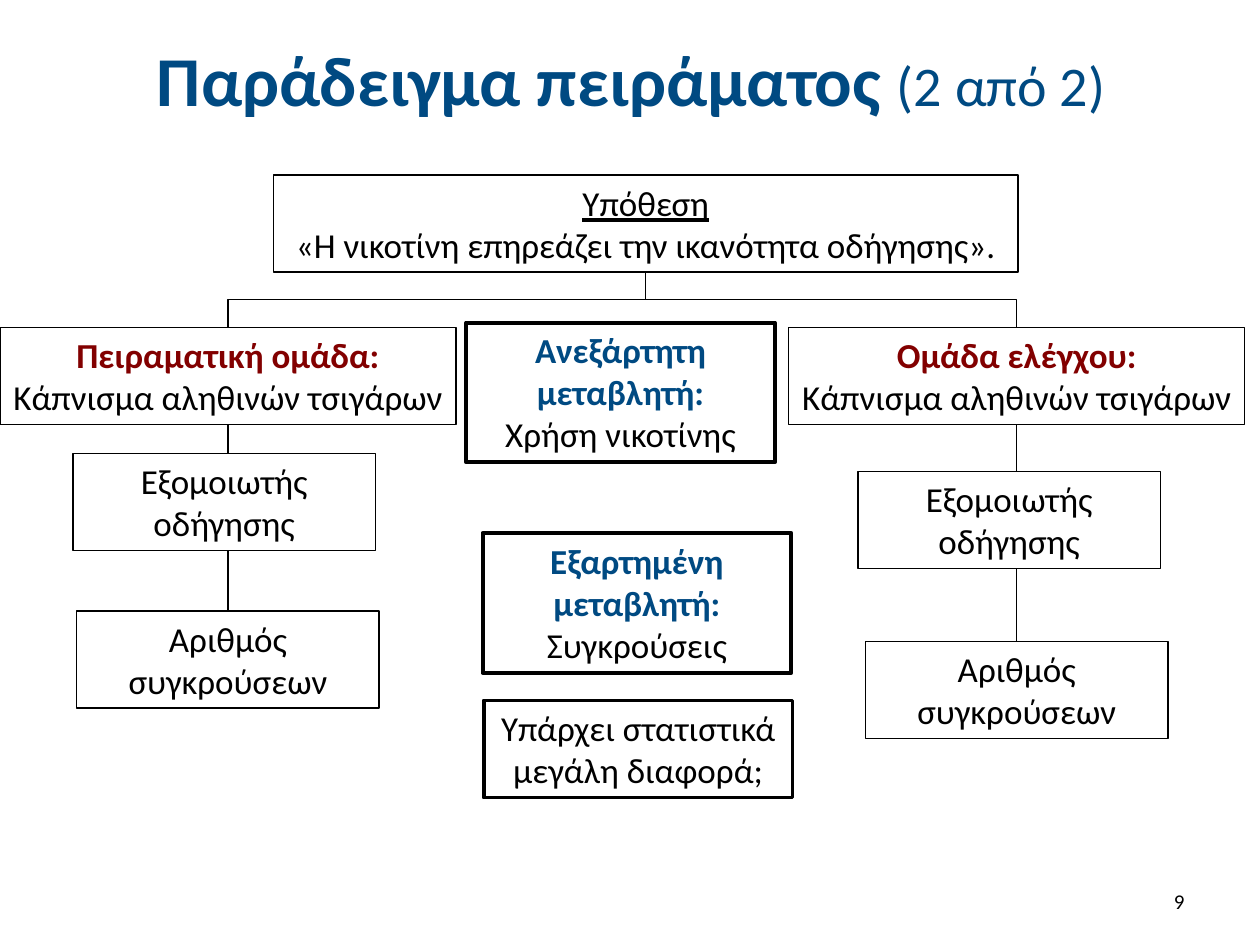
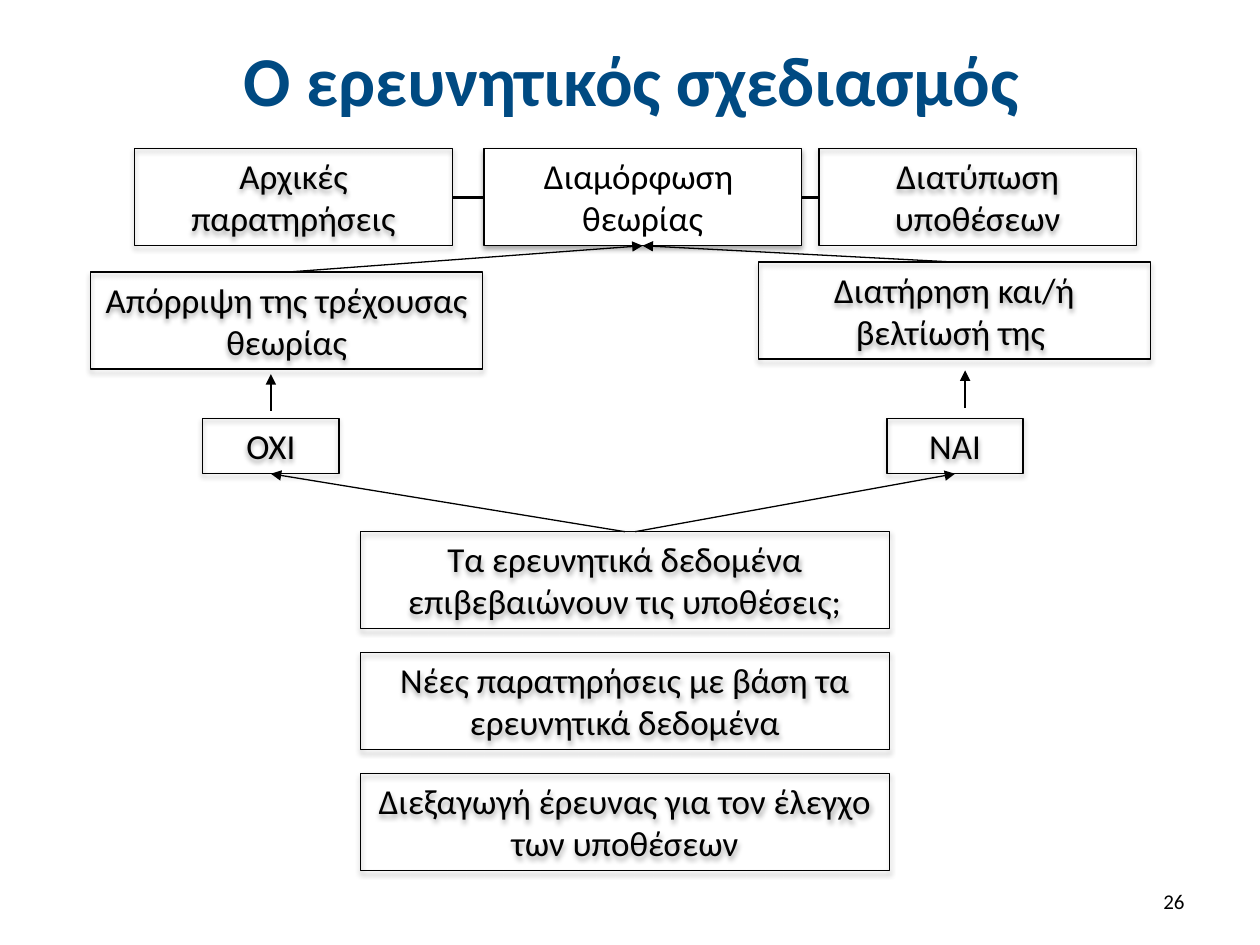
import dataclasses

import lxml.etree
import pptx
import pptx.dml.color
import pptx.enum.shapes
import pptx.enum.text
import pptx.oxml.ns
import pptx.util

SLIDE_WIDTH = pptx.util.Inches(10)
SLIDE_HEIGHT = pptx.util.Inches(7.5)
COLUMN = SLIDE_WIDTH / 100
ROW = SLIDE_HEIGHT / 75
BLACK, WHITE, BLUE, RED = "000000", "FFFFFF", "004A82", "820000"
FONT = "Calibri"
THIN, MEDIUM, THICK = 0.75, 1.75, 2.25
ONE_LINE, TWO_LINES, THREE_LINES = 4.4, 7.7, 11.1
TOP, BOTTOM, LEFT, RIGHT = 0, 2, 1, 3
CENTER = pptx.enum.text.PP_ALIGN.CENTER
MIDDLE = pptx.enum.text.MSO_ANCHOR.MIDDLE
FIXED = pptx.enum.text.MSO_AUTO_SIZE.NONE
GROW = pptx.enum.text.MSO_AUTO_SIZE.SHAPE_TO_FIT_TEXT
STRAIGHT = pptx.enum.shapes.MSO_CONNECTOR.STRAIGHT
ELBOW = pptx.enum.shapes.MSO_CONNECTOR.ELBOW


@dataclasses.dataclass
class Area:
    left: float
    top: float
    width: float
    height: float

    def inner(self, left, top, width, height):
        return Area(self.left + left, self.top + top, width, height)

    def lengths(self):
        return (round(self.left * COLUMN), round(self.top * ROW),
                round(self.width * COLUMN), round(self.height * ROW))


TITLE = Area(5.1, 1.3, 90, 9.9)
PAGE_NUMBER = Area(71.7, 69.5, 23.3, 4)


def colour(hex_string):
    return pptx.dml.color.RGBColor.from_string(hex_string)


def apply(target, formats):
    for attribute, value in formats.items():
        setattr(target, attribute, value)


def add_xml(parent, tag, **attributes):
    child = lxml.etree.SubElement(parent, pptx.oxml.ns.qn(tag))
    for key, value in attributes.items():
        child.set(key, str(value))
    return child


def write(frame, paragraphs, align=CENTER, **frame_formats):
    apply(frame, {"word_wrap": True, **frame_formats})
    for index, runs in enumerate(paragraphs):
        paragraph = frame.add_paragraph() if index else frame.paragraphs[0]
        paragraph.alignment = align
        for words, formats in runs:
            run = paragraph.add_run()
            run.text = words
            font = {"name": FONT, "size": 20, "bold": False, "color": BLACK, **formats}
            run.font.color.rgb = colour(font.pop("color"))
            font["size"] = pptx.util.Pt(font["size"])
            apply(run.font, font)


def add_box(slide, area, paragraphs, fill=None, weight=THIN, shadow=False):
    box = slide.shapes.add_shape(pptx.enum.shapes.MSO_SHAPE.RECTANGLE, *area.lengths())
    box.shadow.inherit = False
    if shadow:
        effects = box._element.spPr.find(pptx.oxml.ns.qn("a:effectLst"))
        outer = add_xml(effects, "a:outerShdw", blurRad=pptx.util.Pt(3.1),
                        dist=pptx.util.Pt(1.8), dir=5400000, rotWithShape=0)
        add_xml(add_xml(outer, "a:srgbClr", val=BLACK), "a:alpha", val=35000)
    if fill:
        box.fill.solid()
        box.fill.fore_color.rgb = colour(fill)
    else:
        box.fill.background()
    box.line.color.rgb = colour(BLACK)
    box.line.width = pptx.util.Pt(weight)
    write(box.text_frame, paragraphs, auto_size=GROW,
          vertical_anchor=pptx.enum.text.MSO_ANCHOR.TOP)
    return box


def plain(*lines):
    return [[(line, {})] for line in lines]


def headed(heading, detail, **formats):
    return [[(heading, formats)], [(detail, {})]]


def add_link(slide, start=(0, 0), end=(0, 0), begin=None, finish=None,
             weight=THIN, arrow=False, kind=STRAIGHT):
    points = [round(length * unit) for point in (start, end)
              for length, unit in zip(point, (COLUMN, ROW))]
    link = slide.shapes.add_connector(kind, *points)
    if begin:
        link.begin_connect(*begin)
    if finish:
        link.end_connect(*finish)
    link.line.color.rgb = colour(BLACK)
    link.line.width = pptx.util.Pt(weight)
    if arrow:
        line = link._element.spPr.find(pptx.oxml.ns.qn("a:ln"))
        add_xml(line, "a:tailEnd", type="triangle")
    add_xml(link._element.spPr, "a:effectLst")
    return link


def add_fork(slide, hypothesis, group):
    fork = add_link(slide, begin=(hypothesis, BOTTOM), finish=(group, TOP), kind=ELBOW)
    drop, span = fork.height, fork.width
    to_right = fork.end_x > fork.begin_x
    apply(fork, {"left": fork.left + (span - drop) // 2,
                 "top": fork.top + (drop - span) // 2,
                 "width": drop, "height": span})
    frame = fork._element.spPr.find(pptx.oxml.ns.qn("a:xfrm"))
    frame.set("rot", str((270 if to_right else 90) * 60000))
    frame.set("flipH", "1" if to_right else "0")


def start_slide(deck, title_runs, number):
    slide = deck.slides.add_slide(deck.slide_layouts[5])
    title = slide.shapes.title
    apply(title, dict(zip(("left", "top", "width", "height"), TITLE.lengths())))
    write(title.text_frame, [title_runs], vertical_anchor=MIDDLE, auto_size=FIXED)
    page = slide.shapes.add_textbox(*PAGE_NUMBER.lengths())
    write(page.text_frame, [[(str(number), {"size": 12})]],
          pptx.enum.text.PP_ALIGN.RIGHT, vertical_anchor=MIDDLE)
    return slide


def add_group(slide, area, heading, simulator_at):
    step_width = 24
    group = add_box(slide, area.inner(0, 0, area.width, TWO_LINES),
                    headed(heading, "Κάπνισμα αληθινών τσιγάρων", bold=True, color=RED))
    crashes = add_box(slide, area.inner((area.width - step_width) / 2,
                                        area.height - TWO_LINES, step_width, TWO_LINES),
                      plain("Αριθμός συγκρούσεων"), fill=WHITE)
    add_link(slide, begin=(group, BOTTOM), finish=(crashes, TOP))
    add_box(slide, area.inner(*simulator_at, step_width, TWO_LINES),
            plain("Εξομοιωτής οδήγησης"), fill=WHITE)
    return group


def add_variables(slide, area):
    heading = {"bold": True, "color": BLUE}
    for left, top, height, paragraphs in (
            (0, 0, THREE_LINES,
             headed("Ανεξάρτητη μεταβλητή:", "Χρήση νικοτίνης", **heading)),
            (1.3, 16.7, THREE_LINES,
             headed("Εξαρτημένη μεταβλητή:", "Συγκρούσεις", **heading)),
            (1.4, area.height - TWO_LINES, TWO_LINES,
             plain("Υπάρχει στατιστικά μεγάλη διαφορά;"))):
        add_box(slide, area.inner(left, top, 24.5, height), paragraphs, weight=THICK)


def experiment_slide(deck):
    slide = start_slide(deck, [("Παράδειγμα πειράματος ",
                                {"size": 40, "bold": True, "color": BLUE}),
                               ("(2 από 2)", {"size": 32, "color": BLUE})], 9)
    hypothesis = add_box(slide, Area(21.7, 13.9, 59.1, TWO_LINES),
                         headed("Υπόθεση", "«Η νικοτίνη επηρεάζει την ικανότητα οδήγησης».",
                                underline=True))
    for area, heading, simulator_at in (
            (Area(0, 26, 36.2, 30.2), "Πειραματική ομάδα:", (5.8, 10)),
            (Area(62.6, 26, 36.2, 32.6), "Ομάδα ελέγχου:", (5.5, 11.4))):
        add_fork(slide, hypothesis, add_group(slide, area, heading, simulator_at))
    add_variables(slide, Area(37, 25.6, 25.9, 37.7))


def add_theory_row(slide, area):
    width = 25.2
    observations, hypotheses = [
        add_box(slide, area.inner(left, 0, width, area.height), plain(words), shadow=True)
        for left, words in ((0, "Αρχικές παρατηρήσεις"),
                            (area.width - width, "Διατύπωση υποθέσεων"))]
    add_link(slide, begin=(observations, RIGHT), finish=(hypotheses, LEFT), weight=MEDIUM)
    return add_box(slide, area.inner(27.7, 0, width, area.height),
                   plain("Διαμόρφωση ", "θεωρίας"), fill=WHITE, shadow=True)


def add_research_steps(slide, area, steps):
    pitch = (area.height - TWO_LINES) / (len(steps) - 1)
    return [add_box(slide, area.inner(0, index * pitch, area.width, TWO_LINES),
                    plain(words), shadow=True)
            for index, words in enumerate(steps)]


def add_branch(slide, area, theory, outcome_words, answer_words, answer_left,
               arrow_left, arrow_rows):
    outcome = add_box(slide, area.inner(0, 0, area.width, TWO_LINES),
                      plain(outcome_words), shadow=True)
    answer = add_box(slide, area.inner(answer_left, area.height - ONE_LINE, 10.8, ONE_LINE),
                     plain(answer_words), shadow=True)
    add_link(slide, begin=(outcome, TOP), finish=(theory, BOTTOM), arrow=True)
    start, end = [(area.left + arrow_left, area.top + row) for row in arrow_rows]
    add_link(slide, start, end, arrow=True)
    return answer


def design_slide(deck):
    slide = start_slide(deck, [("Ο ερευνητικός σχεδιασμός",
                                {"size": 40, "bold": True, "color": BLUE})], 26)
    theory = add_theory_row(slide, Area(10.7, 11.8, 79.5, TWO_LINES))
    steps_area = Area(28.6, 42.2, 42, 26.9)
    question = add_research_steps(slide, steps_area, (
        "Τα ερευνητικά δεδομένα επιβεβαιώνουν τις υποθέσεις;",
        "Νέες παρατηρήσεις με βάση τα ερευνητικά δεδομένα",
        "Διεξαγωγή έρευνας για τον έλεγχο των υποθέσεων"))[0]
    no = add_branch(slide, Area(7.2, 21.6, 31.1, 16), theory,
                    "Απόρριψη της τρέχουσας θεωρίας", "OXI", 8.9, 14.3, (11, 8.1))
    yes = add_branch(slide, Area(60.2, 20.8, 31.1, 16.8), theory,
                     "Διατήρηση και/ή βελτίωσή της ", "NAI", 10.2, 16.4, (11.6, 8.6))
    add_link(slide, begin=(question, TOP), finish=(no, BOTTOM), arrow=True)
    add_link(slide, start=(50.4, steps_area.top), finish=(yes, BOTTOM), arrow=True)


def main():
    deck = pptx.Presentation()
    apply(deck, {"slide_width": SLIDE_WIDTH, "slide_height": SLIDE_HEIGHT})
    experiment_slide(deck)
    design_slide(deck)
    deck.save("out.pptx")


if __name__ == "__main__":
    main()
